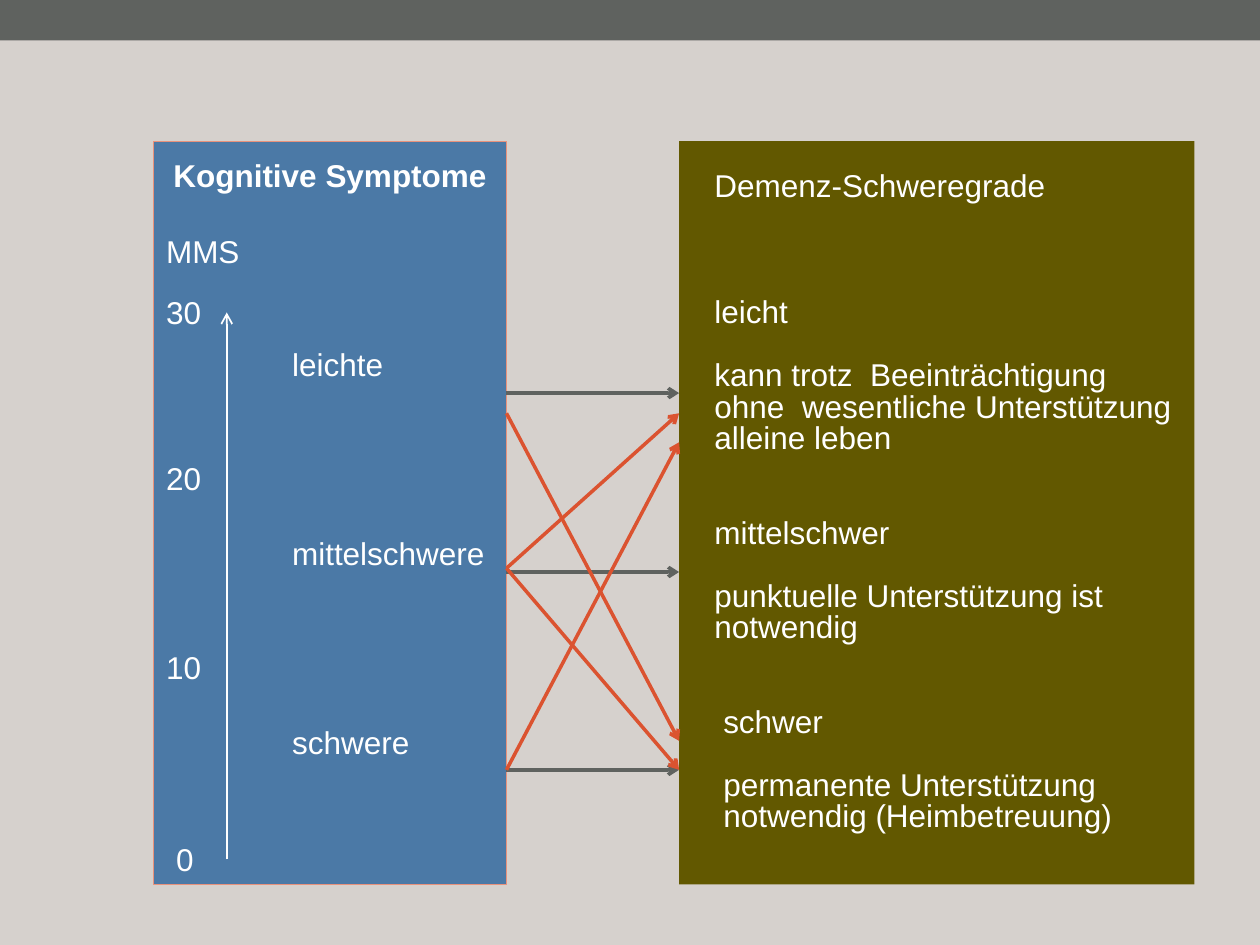
import pptx
import pptx.util
import pptx.dml.color
import pptx.enum.shapes
import pptx.enum.text
import pptx.oxml.ns
import lxml.etree

Inches, Pt = pptx.util.Inches, pptx.util.Pt
ALIGN = pptx.enum.text.PP_ALIGN

COLORS = {
    "background": "D6D1CD",
    "grey": "5F625F",
    "blue": "4B79A6",
    "blue_edge": "E8927C",
    "olive": "625800",
    "red": "DB5330",
    "white": "FFFFFF",
}

SYMPTOMS_BOX = (1.22, 1.12, 2.8, 5.9)
SEVERITY_BOX = (5.39, 1.12, 4.09, 5.9)

SYMPTOMS = [
    ("Kognitive Symptome", 0, 0),
    ("MMS", 1, 0),
    ("leichte", 2, 1),
    ("20", 2, 0),
    ("mittelschwere", 1, 1),
    ("10", 2, 0),
    ("schwere", 1, 1),
]

SEVERITY = [
    ("Demenz-Schweregrade", 0, 0.28),
    ("leicht", 3, 0.28),
    ("kann trotz  Beeinträchtigung", 1, 0.28),
    ("ohne  wesentliche Unterstützung", 0, 0.28),
    ("alleine leben", 0, 0.28),
    ("mittelschwer", 2, 0.28),
    ("punktuelle Unterstützung ist", 1, 0.28),
    ("notwendig", 0, 0.28),
    ("schwer", 2, 0.35),
    ("permanente Unterstützung", 1, 0.35),
    ("notwendig (Heimbetreuung)", 0, 0.35),
]

LINKS = [
    ("grey", 3.12, 3.12),
    ("grey", 4.54, 4.54),
    ("grey", 6.11, 6.11),
    ("red", 3.28, 5.88),
    ("red", 4.51, 6.11),
    ("red", 6.11, 3.51),
    ("red", 4.51, 3.28),
]


def rgb(name):
    """Return the named colour."""
    return pptx.dml.color.RGBColor.from_string(COLORS[name])


def add_rect(slide, box, fill, edge=None):
    """Add a flat rectangle."""
    sp = slide.shapes.add_shape(
        pptx.enum.shapes.MSO_SHAPE.RECTANGLE, *map(Inches, box))
    sp.shadow.inherit = False
    sp.fill.solid()
    sp.fill.fore_color.rgb = rgb(fill)
    if edge:
        sp.line.color.rgb = rgb(edge)
        sp.line.width = Pt(0.5)
    else:
        sp.line.fill.background()
    return sp


def add_arrow(slide, start, end, color, width):
    """Add a straight line with an open arrowhead at its end."""
    cxn = slide.shapes.add_connector(
        pptx.enum.shapes.MSO_CONNECTOR.STRAIGHT, *map(Inches, start + end))
    cxn.line.color.rgb = rgb(color)
    cxn.line.width = Pt(width)
    qn = pptx.oxml.ns.qn
    ln = cxn.line._get_or_add_ln()
    lxml.etree.SubElement(ln, qn("a:tailEnd"), type="arrow")
    lxml.etree.SubElement(cxn._element.spPr, qn("a:effectLst"))


def format_text(p, bold=False):
    """Give a paragraph's runs the slide's text style."""
    for r in p.runs:
        r.font.name = "Arial"
        r.font.size = Pt(18)
        r.font.bold = bold
        r.font.color.rgb = rgb("white")


def fill_panel(sp, rows, pitch, inset_left, inset_top):
    """Write rows of text, skipped lines and indent on a fixed line pitch."""
    tf = sp.text_frame
    tf.word_wrap = True
    tf.vertical_anchor = pptx.enum.text.MSO_ANCHOR.TOP
    tf.margin_left = tf.margin_right = Inches(inset_left)
    tf.margin_top, tf.margin_bottom = Inches(inset_top), 0
    for i, (text, skipped, indent) in enumerate(rows):
        p = tf.add_paragraph() if i else tf.paragraphs[0]
        p.text = text
        p.alignment = ALIGN.LEFT
        p.line_spacing = Pt(pitch)
        if skipped:
            p.space_before = Pt(pitch * skipped)
        if indent:
            p._p.get_or_add_pPr().set("marL", str(Inches(indent)))
        format_text(p)
    return tf


def add_scale_label(slide, left, top, text):
    """Add an end label of the MMS scale."""
    box = slide.shapes.add_textbox(*map(Inches, (left, top, 0.5, 0.4)))
    tf = box.text_frame
    tf.word_wrap = True
    tf.text = text
    format_text(tf.paragraphs[0])


def add_symptoms(slide, box):
    """Add the panel of cognitive symptoms with its MMS scale."""
    left, top = box[:2]
    sp = add_rect(slide, box, "blue", "blue_edge")
    heading = fill_panel(sp, SYMPTOMS, 21.6, 0.1, 0.12).paragraphs[0]
    heading.alignment = ALIGN.CENTER
    format_text(heading, bold=True)
    axis = left + 0.58
    add_arrow(slide, (axis, top + 5.7), (axis, top + 1.36), "white", 1)
    add_scale_label(slide, left, top + 1.16, "30")
    add_scale_label(slide, left + 0.08, top + 5.5, "0")


def add_severity(slide, box):
    """Add the panel of dementia severity grades."""
    fill_panel(add_rect(slide, box, "olive"), SEVERITY, 18, 0, 0.25)


def add_links(slide, left, right):
    """Add the arrows that lead from symptoms to severity grades."""
    for color, start, end in LINKS:
        add_arrow(slide, (left, start), (right, end), color, 2)


def main():
    """Build and save the slide."""
    prs = pptx.Presentation()
    prs.slide_width, prs.slide_height = Inches(10), Inches(7.5)
    slide = prs.slides.add_slide(prs.slide_layouts[6])
    slide.background.fill.solid()
    slide.background.fill.fore_color.rgb = rgb("background")
    add_rect(slide, (0, 0, 10, 0.32), "grey")
    add_symptoms(slide, SYMPTOMS_BOX)
    add_severity(slide, SEVERITY_BOX)
    add_links(slide, SYMPTOMS_BOX[0] + SYMPTOMS_BOX[2], SEVERITY_BOX[0])
    prs.save("out.pptx")


if __name__ == "__main__":
    main()
